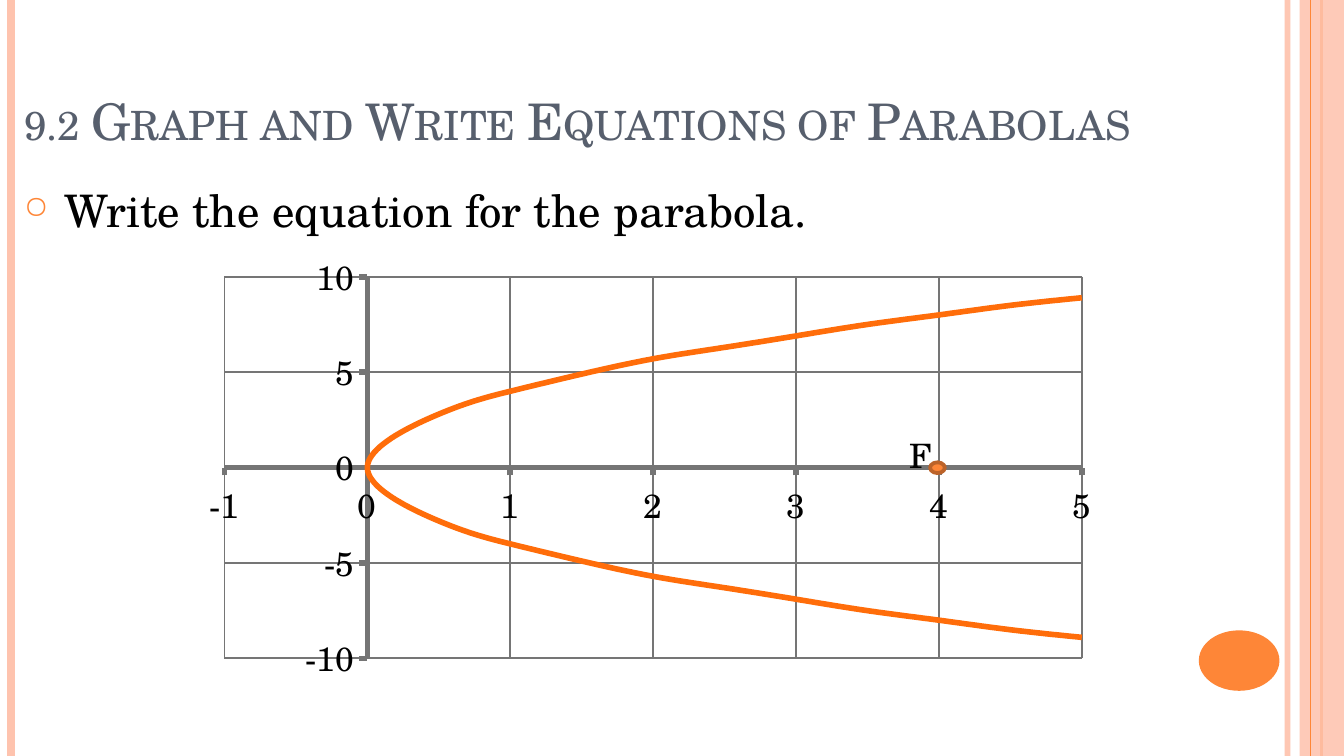
from lxml.etree import SubElement
from pptx import Presentation
from pptx.chart.data import XyChartData
from pptx.dml.color import RGBColor
from pptx.enum.chart import XL_CHART_TYPE, XL_TICK_MARK
from pptx.enum.shapes import MSO_CONNECTOR, MSO_SHAPE
from pptx.enum.text import MSO_ANCHOR, MSO_AUTO_SIZE, PP_ALIGN
from pptx.oxml.ns import qn
from pptx.util import Inches, Pt

COLORS = {"orange": "FE8637", "peach": "FEC3AE", "curve": "FF6D0A", "rim": "BC6329",
          "slate": "575F6D", "black": "000000", "grid": "757575"}
FONT = "TeX Gyre Schola"
WIDTH = 10
HEIGHT = WIDTH * 9 / 16


def rgb(name):
    return RGBColor.from_string(COLORS[name])


def sub(parent, tag, **attrs):
    return SubElement(parent, qn(tag), attrs)


def set_alpha(fill_parent, percent):
    color = next(fill_parent.iter(qn("a:srgbClr")))
    sub(color, "a:alpha", val=str(percent * 1000))


class SlideBuilder:
    def __init__(self, prs):
        self.s = prs.slides.add_slide(prs.slide_layouts[5])

    def style(self, font, size, color="black"):
        font.name, font.size = FONT, Pt(size)
        font.color.rgb = rgb(color)

    def title(self, text, box, size):
        sp = self.s.shapes.title
        sp.left, sp.top, sp.width, sp.height = map(Inches, box)
        tf = sp.text_frame
        tf.text = text
        tf.auto_size = MSO_AUTO_SIZE.NONE
        tf.vertical_anchor = MSO_ANCHOR.BOTTOM
        p = tf.paragraphs[0]
        p.alignment = PP_ALIGN.LEFT
        r = p.runs[0]
        self.style(r.font, size, "slate")
        r.font._element.set("cap", "small")

    def text(self, text, box, size):
        tf = self.s.shapes.add_textbox(*map(Inches, box)).text_frame
        tf.word_wrap = True
        p = tf.paragraphs[0]
        p.text = text
        self.style(p.font, size)
        return p

    def bullet(self, text, box, size):
        p = self.text(text, box, size)
        p.space_before = Pt(6)
        pPr = p._p.get_or_add_pPr()
        pPr.set("marL", str(Inches(0.3)))
        pPr.set("indent", str(Inches(-0.3)))
        marks = [sub(pPr, "a:buClr"), sub(pPr, "a:buSzPct", val="70000"),
                 sub(pPr, "a:buChar", char="○")]
        sub(marks[0], "a:srgbClr", val=COLORS["orange"])
        defaults = pPr.find(qn("a:defRPr"))
        for mark in marks:
            defaults.addprevious(mark)

    def vertical_rule(self, x, width, color, alpha=None):
        line = self.s.shapes.add_connector(MSO_CONNECTOR.STRAIGHT, Inches(x), 0,
                                           Inches(x), Inches(HEIGHT))
        line.line.color.rgb = rgb(color)
        line.line.width = Pt(width)
        if alpha:
            set_alpha(line._element.spPr, alpha)
        sub(line._element.spPr, "a:effectLst")

    def shape(self, kind, box, fill, rim=None, alpha=None):
        sp = self.s.shapes.add_shape(kind, *map(Inches, box))
        sp.shadow.inherit = False
        sp.fill.solid()
        sp.fill.fore_color.rgb = rgb(fill)
        if alpha:
            set_alpha(sp._element.spPr, alpha)
        if rim:
            sp.line.color.rgb = rgb(rim)
            sp.line.width = Pt(2)
        else:
            sp.line.fill.background()

    def curve_chart(self, points, box, plot):
        """Smooth scatter chart; plot gives the inner plot area in slide inches."""
        data = XyChartData()
        series = data.add_series("Series 1")
        for x, y in points:
            series.add_data_point(x, y)
        chart = self.s.shapes.add_chart(XL_CHART_TYPE.XY_SCATTER_SMOOTH_NO_MARKERS,
                                        *map(Inches, box), data).chart
        chart.has_legend = chart.has_title = False
        self.style(chart.font, 18)
        chart.plots[0].vary_by_categories = False
        curve = chart.plots[0].series[0]
        curve._element.find(qn("c:smooth")).set("val", "1")
        curve.format.line.color.rgb = rgb("curve")
        curve.format.line.width = Pt(3)
        self.axis(chart.category_axis, -1, 5, 1)
        self.axis(chart.value_axis, -10, 10, 5)
        self.place_plot(chart, box, plot)

    def axis(self, axis, low, high, step):
        axis.minimum_scale, axis.maximum_scale, axis.major_unit = low, high, step
        axis.major_tick_mark = XL_TICK_MARK.OUTSIDE
        axis.has_major_gridlines = True
        for part, width in ((axis, 3), (axis.major_gridlines, 1)):
            part.format.line.color.rgb = rgb("grid")
            part.format.line.width = Pt(width)
        axis.tick_labels.number_format = "General"
        axis.tick_labels.number_format_is_linked = False

    def place_plot(self, chart, box, plot):
        area = chart._chartSpace.chart.plotArea
        for old in area.findall(qn("c:layout")):
            area.remove(old)
        layout = sub(area, "c:layout")
        area.insert(0, layout)
        manual = sub(layout, "c:manualLayout")
        sub(manual, "c:layoutTarget", val="inner")
        for mode in ("xMode", "yMode"):
            sub(manual, f"c:{mode}", val="edge")
        left, top, width, height = box
        fractions = {"x": (plot[0] - left) / width, "y": (plot[1] - top) / height,
                     "w": plot[2] / width, "h": plot[3] / height}
        for key, value in fractions.items():
            sub(manual, f"c:{key}", val=f"{value:.4f}")


def main():
    prs = Presentation()
    prs.slide_width, prs.slide_height = Inches(WIDTH), Inches(HEIGHT)
    b = SlideBuilder(prs)

    b.vertical_rule(9.58, 3, "peach", alpha=93)
    b.vertical_rule(0.08, 4.5, "peach")
    b.vertical_rule(9.83, 1.5, "orange")
    b.shape(MSO_SHAPE.RECTANGLE, (9.67, 0, 0.33, HEIGHT), "peach", alpha=87)
    b.vertical_rule(9.75, 0.75, "orange")
    b.shape(MSO_SHAPE.OVAL, (8.92, 4.69, 0.6, 0.45), "orange")

    b.title("9.2 Graph and Write Equations of Parabolas", (0.08, 0.23, 9.08, 0.94), 27)
    b.bullet("Write the equation for the parabola.", (0.08, 1.31, 9.08, 4), 24)

    # y² = 16x, from the lower branch through the vertex to the upper one
    upper = [(i / 2, round(4 * (i / 2) ** 0.5, 1)) for i in range(11)]
    lower = [(x, -y) for x, y in upper[:0:-1]]
    b.curve_chart(lower + upper, (1.42, 1.81, 6.83, 3.33), (1.67, 2.06, 6.38, 2.84))
    b.shape(MSO_SHAPE.OVAL, (6.92, 3.44, 0.11, 0.08), "orange", rim="rim")
    b.text("F", (6.67, 3.19, 0.67, 0.4), 18)

    prs.save("out.pptx")


if __name__ == "__main__":
    main()
